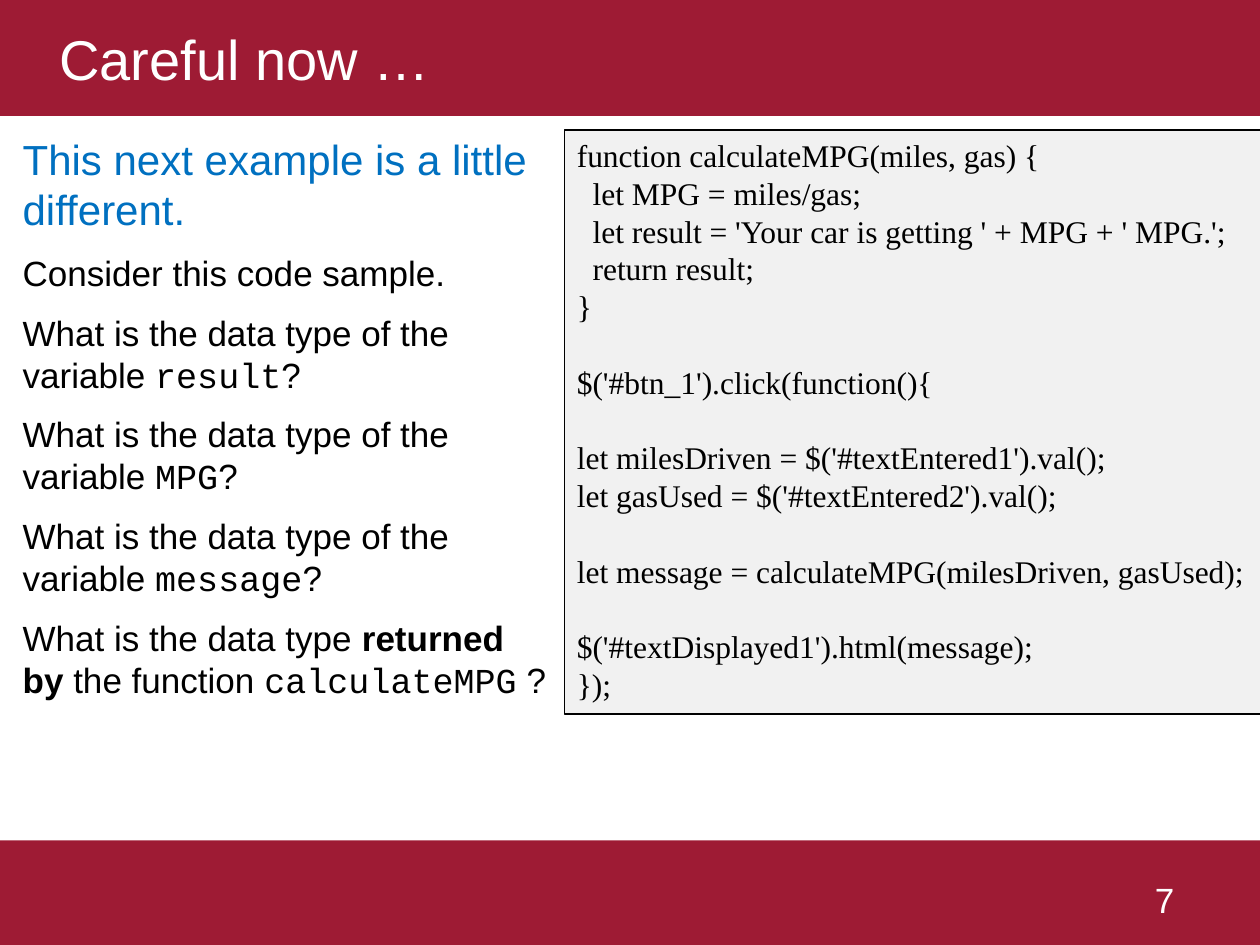
from lxml import etree
from pptx import Presentation
from pptx.dml.color import RGBColor
from pptx.enum.shapes import MSO_SHAPE
from pptx.enum.text import MSO_ANCHOR, MSO_AUTO_SIZE, PP_ALIGN
from pptx.oxml.ns import qn
from pptx.util import Inches, Pt

RECTANGLE = MSO_SHAPE.RECTANGLE
TOP, MIDDLE = MSO_ANCHOR.TOP, MSO_ANCHOR.MIDDLE
NO_AUTOFIT = MSO_AUTO_SIZE.NONE
LEFT, RIGHT = PP_ALIGN.LEFT, PP_ALIGN.RIGHT

CRIMSON = RGBColor(0x9E, 0x1B, 0x34)
BLUE = RGBColor(0x00, 0x70, 0xC0)
GRAY = RGBColor(0xD9, 0xD9, 0xD9)
BLACK = RGBColor(0x00, 0x00, 0x00)
WHITE = RGBColor(0xFF, 0xFF, 0xFF)

SANS, MONO, SERIF = "Arial", "Courier New", "Times New Roman"
LINE_FACTOR = 1.2
CODE_SIZE = 18
CODE_INDENT = 9

VARIABLES = ["result", "MPG", "message"]
RETURN_QUESTION = [
    ("What is the data type ", SANS, False),
    ("returned \vby", SANS, True),
    (" the function ", SANS, False),
    ("calculateMPG", MONO, False),
    (" ?", SANS, False),
]
CODE_BLOCKS = [
    [
        (0, "function calculateMPG(miles, gas) {"),
        (1, "let MPG = miles/gas;"),
        (1, "let result = 'Your car is getting ' + MPG + ' MPG.';"),
        (1, "return result;"),
        (0, "}"),
    ],
    [(0, "$('#btn_1').click(function(){")],
    [
        (0, "let milesDriven = $('#textEntered1').val();"),
        (0, "let gasUsed = $('#textEntered2').val();"),
    ],
    [(0, "let message = calculateMPG(milesDriven, gasUsed);")],
    [(0, "$('#textDisplayed1').html(message);"), (0, "});")],
]


def place(shape, left, top, width, height):
    """Move and size a shape, in inches."""
    shape.left, shape.top = Inches(left), Inches(top)
    shape.width, shape.height = Inches(width), Inches(height)


def format_runs(paragraph, font_name, size, color, bold=False):
    """Format every run of a paragraph."""
    for run in paragraph.runs:
        run.font.name = font_name
        run.font.size = Pt(size)
        run.font.color.rgb = color
        run.font.bold = bold


def set_indent(paragraph, margin):
    """Give a paragraph a left margin in points and no bullet."""
    properties = paragraph._p.get_or_add_pPr()
    properties.set("marL", str(Pt(margin)))
    properties.set("indent", "0")
    etree.SubElement(properties, qn("a:buNone"))


def next_paragraph(text_frame):
    """Return the empty first paragraph or a new one."""
    first = text_frame.paragraphs[0]
    return text_frame.add_paragraph() if first.text else first


def add_rectangle(slide, color, *box):
    """Add a flat filled rectangle."""
    shape = slide.shapes.add_shape(RECTANGLE, *map(Inches, box))
    shape.shadow.inherit = False
    shape.fill.solid()
    shape.fill.fore_color.rgb = color
    shape.line.fill.background()
    return shape


def fill_title(slide):
    """Turn the title placeholder into the header bar."""
    title = slide.shapes.title
    place(title, 0, 0, 10, 0.92)
    title.fill.solid()
    title.fill.fore_color.rgb = CRIMSON
    title.text_frame.text = "Careful now …"
    title.text_frame.vertical_anchor = MIDDLE
    paragraph = title.text_frame.paragraphs[0]
    paragraph.alignment = LEFT
    set_indent(paragraph, 26.64)
    format_runs(paragraph, SANS, 32, WHITE)


def add_body_paragraph(text_frame, pieces, size=20, color=BLACK):
    """Add a body paragraph from text, font and bold pieces."""
    paragraph = next_paragraph(text_frame)
    paragraph.space_before = Pt(size * 0.2)
    paragraph.space_after = Pt(6)
    paragraph.line_spacing = Pt(size * LINE_FACTOR)
    set_indent(paragraph, 0)
    for text, font_name, bold in pieces:
        for index, part in enumerate(text.split("\v")):
            if index:
                paragraph.add_line_break()
            run = paragraph.add_run()
            run.text = part
            run.font.name = font_name
            run.font.size = Pt(size)
            run.font.color.rgb = color
            run.font.bold = bold


def fill_body(slide):
    """Write the questions into the body placeholder."""
    body = slide.placeholders[1]
    place(body, 0.08, 1.01, 4.42, 5.49)
    text_frame = body.text_frame
    text_frame.auto_size = NO_AUTOFIT
    text_frame.vertical_anchor = TOP
    heading = [("This next example is a little different.", SANS, False)]
    add_body_paragraph(text_frame, heading, 24, BLUE)
    add_body_paragraph(text_frame, [("Consider this code sample.", SANS, False)])
    for variable in VARIABLES:
        question = [
            ("What is the data type of the variable ", SANS, False),
            (variable, MONO, False),
            ("?", SANS, False),
        ]
        add_body_paragraph(text_frame, question)
    add_body_paragraph(text_frame, RETURN_QUESTION)


def add_code_box(slide):
    """Add the outlined translucent box with the code sample."""
    box = add_rectangle(slide, GRAY, 4.48, 1.03, 5.66, 4.64)
    color = box.fill._xPr.find(".//" + qn("a:srgbClr"))
    etree.SubElement(color, qn("a:alpha")).set("val", "36000")
    box.line.color.rgb = BLACK
    box.line.width = Pt(1)
    text_frame = box.text_frame
    text_frame.word_wrap = True
    text_frame.vertical_anchor = TOP
    line_height = Pt(CODE_SIZE * LINE_FACTOR)
    for block_index, block in enumerate(CODE_BLOCKS):
        for line_index, (level, line) in enumerate(block):
            paragraph = next_paragraph(text_frame)
            paragraph.text = line
            paragraph.alignment = LEFT
            paragraph.line_spacing = line_height
            if block_index and not line_index:
                paragraph.space_before = line_height
            set_indent(paragraph, level * CODE_INDENT)
            format_runs(paragraph, SERIF, CODE_SIZE, BLACK)


def add_page_number(slide):
    """Add the page number over the footer bar."""
    box = slide.shapes.add_textbox(*map(Inches, (7.17, 6.92, 2.33, 0.33)))
    box.text_frame.word_wrap = True
    box.text_frame.margin_right = Inches(0.18)
    box.text_frame.text = "7"
    paragraph = box.text_frame.paragraphs[0]
    paragraph.alignment = RIGHT
    paragraph.line_spacing = Pt(20 * LINE_FACTOR)
    format_runs(paragraph, SANS, 20, WHITE)


def main():
    """Build and save the slide."""
    presentation = Presentation()
    presentation.slide_width, presentation.slide_height = Inches(10), Inches(7.5)
    slide = presentation.slides.add_slide(presentation.slide_layouts[1])
    add_rectangle(slide, CRIMSON, 0, 6.67, 10, 0.83)
    fill_title(slide)
    fill_body(slide)
    add_page_number(slide)
    add_code_box(slide)
    presentation.save("out.pptx")


if __name__ == "__main__":
    main()
